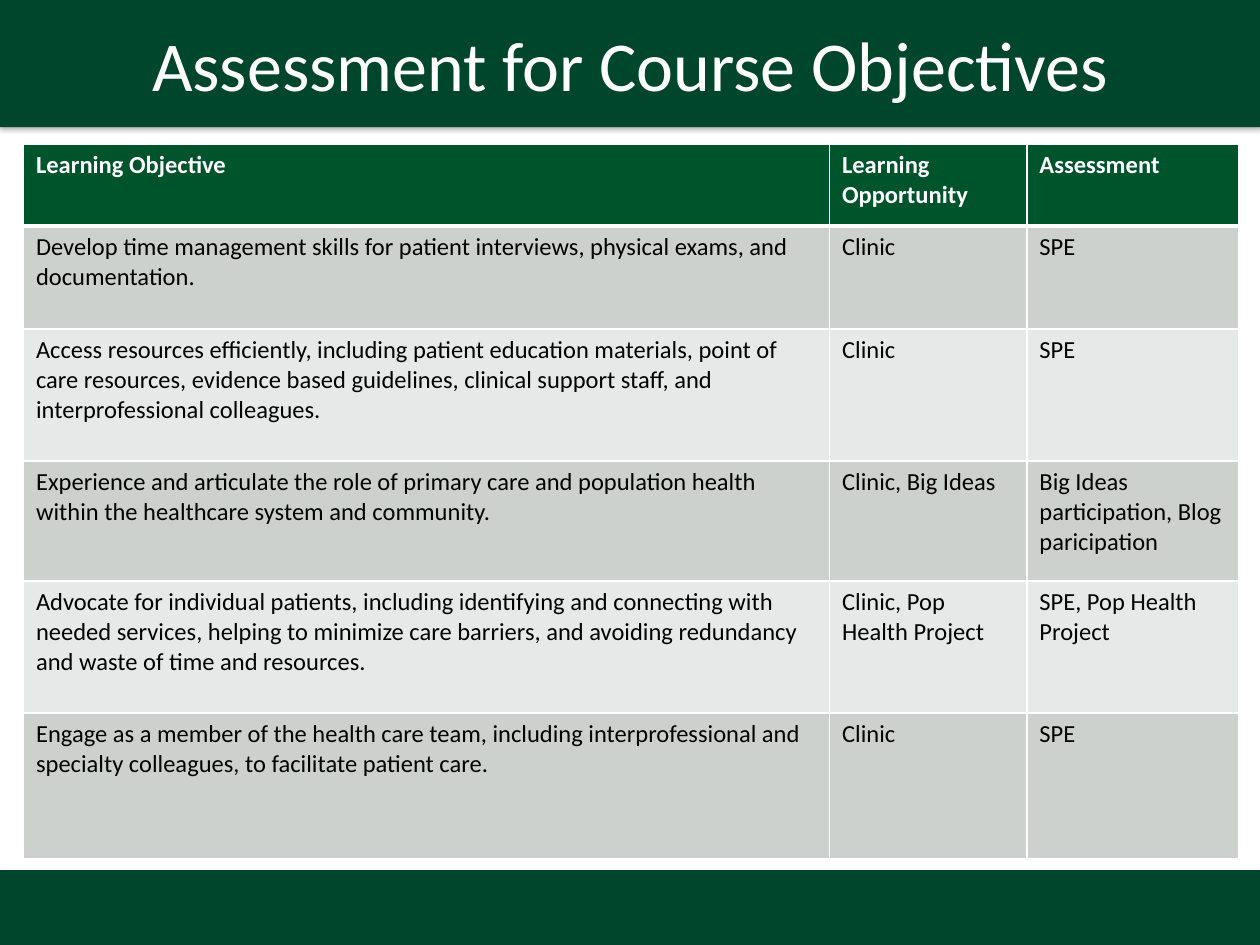
from dataclasses import dataclass

from lxml.etree import SubElement
from pptx import Presentation
from pptx.dml.color import RGBColor
from pptx.enum.shapes import MSO_SHAPE
from pptx.enum.text import MSO_ANCHOR, PP_ALIGN
from pptx.oxml import parse_xml
from pptx.oxml.ns import nsdecls, qn
from pptx.util import Pt


@dataclass(frozen=True)
class Theme:
    font: str = "Calibri"
    title: float = 40
    body: float = 14
    bar: str = "00462D"
    edge: str = "00442D"
    head: str = "00542C"
    bands: tuple = ("CCD1CD", "E7E9E8")
    white: str = "FFFFFF"
    black: str = "000000"
    thin: float = 1
    thick: float = 3


@dataclass(frozen=True)
class Box:
    left: float
    top: float
    width: float
    height: float

    def place(self) -> tuple:
        return tuple(map(Pt, (self.left, self.top, self.width, self.height)))


@dataclass(frozen=True)
class Row:
    height: float
    goal: str
    chance: str
    check: str


THEME = Theme()
WIDTH, HEIGHT = 720, 540
TOP = Box(0, 0, WIDTH, 71.3)
FOOT = Box(0, 497.5, WIDTH, 42.5)
TITLE = Box(0, 0, WIDTH, 72.7)
GRID = Box(13.4, 82.2, 694.5, 408.6)
COLS = (460.6, 112.8, 121.1)
ROWS = (
    Row(46.9, "Learning Objective", "Learning Opportunity", "Assessment"),
    Row(58.9, "Develop time management skills for patient interviews, "
        "physical exams, and documentation.", "Clinic", "SPE"),
    Row(75.4, "Access resources efficiently, including patient education "
        "materials, point of care resources, evidence based guidelines, "
        "clinical support staff, and interprofessional colleagues.",
        "Clinic", "SPE"),
    Row(68.6, "Experience and articulate the role of primary care and "
        "population health within the healthcare system and community.",
        "Clinic, Big Ideas", "Big Ideas participation, Blog paricipation"),
    Row(75.4, "Advocate for individual patients, including identifying and "
        "connecting with needed services, helping to minimize care barriers, "
        "and avoiding redundancy and waste of time and resources.",
        "Clinic, Pop Health Project", "SPE, Pop Health Project"),
    Row(83.4, "Engage as a member of the health care team, including "
        "interprofessional and specialty colleagues, to facilitate patient "
        "care.", "Clinic", "SPE"),
)


def paint(fill, color: str) -> None:
    fill.solid()
    fill.fore_color.rgb = RGBColor.from_string(color)


def write(para, text: str, size: float, color: str, bold: bool = False) -> None:
    run = para.add_run()
    run.text = text
    run.font.name = THEME.font
    run.font.size = Pt(size)
    run.font.bold = bold
    run.font.color.rgb = RGBColor.from_string(color)


def add_rect(slide, box: Box):
    rect = slide.shapes.add_shape(MSO_SHAPE.RECTANGLE, *box.place())
    rect.shadow.inherit = False
    paint(rect.fill, THEME.bar)
    rect.line.fill.background()
    return rect


def add_bar(slide, box: Box) -> None:
    """Draw an edged bar with a soft shadow below it."""
    bar = add_rect(slide, box)
    paint(bar.line.fill, THEME.edge)
    bar.line.width = Pt(0.75)
    glow = bar._element.spPr.find(qn("a:effectLst"))
    glow.append(parse_xml(
        f'<a:outerShdw {nsdecls("a")} blurRad="{Pt(3.1)}" dist="{Pt(1.8)}" '
        f'dir="5400000" rotWithShape="0"><a:srgbClr val="{THEME.black}">'
        '<a:alpha val="35000"/></a:srgbClr></a:outerShdw>'))


def add_title(slide, text: str) -> None:
    frame = add_rect(slide, TITLE).text_frame
    frame.word_wrap = True
    frame.vertical_anchor = MSO_ANCHOR.MIDDLE
    para = frame.paragraphs[0]
    para.alignment = PP_ALIGN.CENTER
    write(para, text, THEME.title, THEME.white)


def rule(cell, top: float, bottom: float) -> None:
    """Border a cell; call before its fill is set, as the schema orders."""
    props = cell._tc.get_or_add_tcPr()
    sides = {"L": THEME.thin, "R": THEME.thin, "T": top, "B": bottom}
    for side, width in sides.items():
        line = SubElement(props, qn(f"a:ln{side}"), w=str(Pt(width)))
        solid = SubElement(line, qn("a:solidFill"))
        SubElement(solid, qn("a:srgbClr"), val=THEME.white)


def add_grid(slide) -> None:
    table = slide.shapes.add_table(len(ROWS), len(COLS), *GRID.place()).table
    table.first_row = table.horz_banding = False
    for col, width in zip(table.columns, COLS):
        col.width = Pt(width)
    for i, row in enumerate(ROWS):
        table.rows[i].height = Pt(row.height)
        head = i == 0
        back = THEME.head if head else THEME.bands[(i - 1) % 2]
        color = THEME.white if head else THEME.black
        top = THEME.thick if i == 1 else THEME.thin
        bottom = THEME.thick if head else THEME.thin
        for j, text in enumerate((row.goal, row.chance, row.check)):
            cell = table.cell(i, j)
            rule(cell, top, bottom)
            paint(cell.fill, back)
            write(cell.text_frame.paragraphs[0], text, THEME.body, color, head)


def main() -> None:
    deck = Presentation()
    deck.slide_width, deck.slide_height = Pt(WIDTH), Pt(HEIGHT)
    slide = deck.slides.add_slide(deck.slide_layouts[6])
    for box in (TOP, FOOT):
        add_bar(slide, box)
    add_title(slide, "Assessment for Course Objectives")
    add_grid(slide)
    deck.save("out.pptx")


if __name__ == "__main__":
    main()
